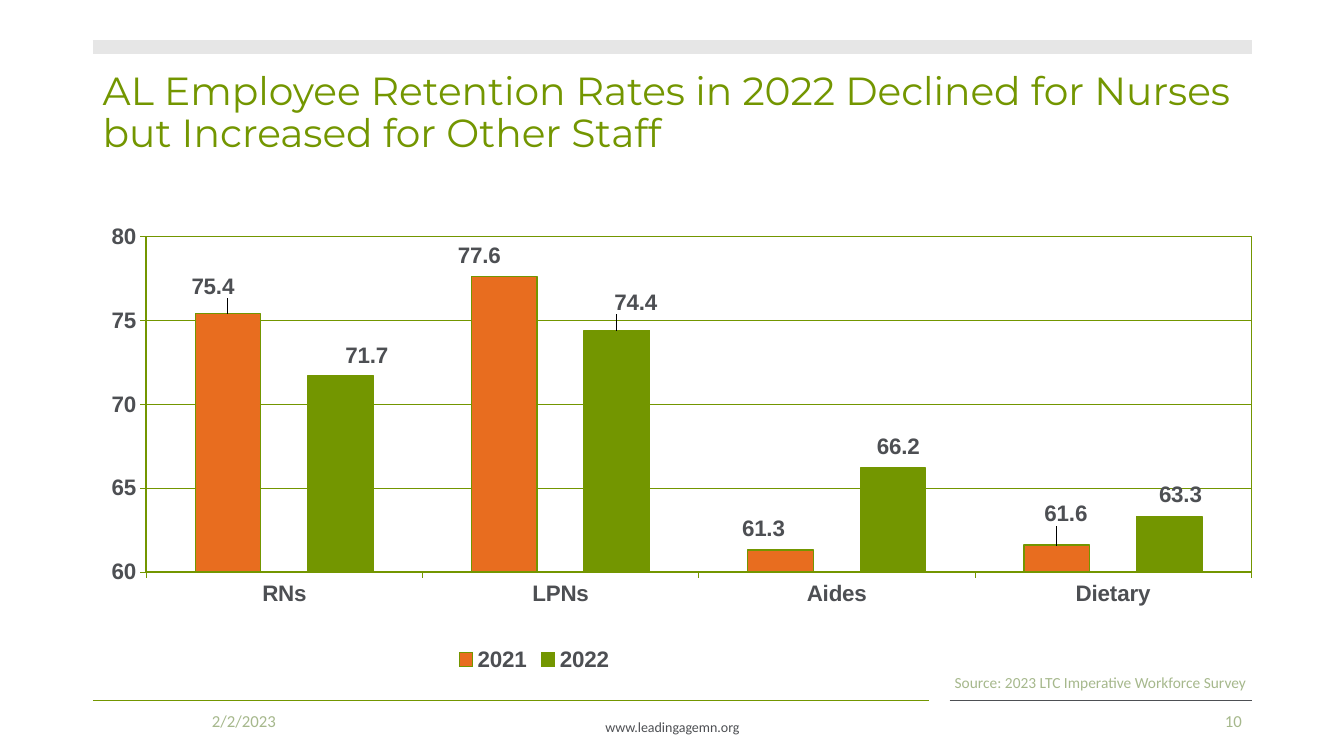
from lxml import etree
from pptx import Presentation, util as u
from pptx.chart.data import CategoryChartData
from pptx.dml.color import RGBColor
from pptx.enum import chart as ch, shapes, text
from pptx.oxml.ns import qn

THEME = {
    "green": "739600", "orange": "E86D1F", "slate": "4D4F53",
    "mist": "E6E6E6", "sage": "A6B88C",
    "head": 28, "label": 16, "foot": 12, "note": 11, "site": 10,
    "title": "Montserrat", "body": "Calibri", "chart": "Arial",
}
LEFT, RIGHT, BASE = 2.34, 31.55, 17.65
WIDE = RIGHT - LEFT
RULES = [
    (LEFT, 23.42, BASE, "green", 1),
    (23.93, RIGHT, BASE, "slate", 1),
    (LEFT, RIGHT, 1.19, "mist", 10),
]
TEXTS = [
    ("www.leadingagemn.org", (11.23, 17.96, 11.43, 0.71), "site", "body", "slate", "CENTER"),
    ("AL Employee Retention Rates in 2022 Declined for Nurses but Increased for Other Staff",
     (LEFT, 1.02, WIDE, 3.68), "head", "title", "green", "LEFT"),
    ("2/2/2023", (LEFT, BASE, 7.62, 1.02), "foot", "body", "sage", "CENTER"),
    ("Source: 2023 LTC Imperative Workforce Survey",
     (22.02, 16.69, 11.43, 1.02), "note", "body", "sage", "CENTER"),
    ("10", (23.93, BASE, 7.62, 1.02), "foot", "body", "sage", "RIGHT"),
]
FRAME = (LEFT, 5.08, WIDE, 12.09)
STAFF = ["RNs", "LPNs", "Aides", "Dietary"]
RATES = [
    ("2021", "orange", [75.4, 77.6, 61.3, 61.6],
     [(-0.38, -0.28), (-0.63, -0.13), (-0.43, -0.13), (0.23, -0.38)]),
    ("2022", "green", [71.7, 74.4, 66.2, 63.3],
     [(0.66, -0.1), (0.48, -0.3), (0.13, -0.13), (0.28, -0.15)]),
]
PLOT = {"layoutTarget": "inner", "xMode": "edge", "yMode": "edge",
        "x": 0.046, "y": 0.073, "w": 0.954, "h": 0.699}
KEY = {"xMode": "edge", "yMode": "edge", "x": 0.31, "y": 0.92}


def put(item, **values):
    for name, value in values.items():
        setattr(item, name, value)


def tint(name):
    return RGBColor.from_string(THEME[name])


def cms(box):
    return [u.Cm(part) for part in box]


def style(font, size, face, color, bold=False):
    put(font, size=u.Pt(THEME[size]), name=THEME[face], bold=bold)
    font.color.rgb = tint(color)


def stroke(line, color, width):
    line.color.rgb = tint(color)
    line.width = u.Pt(width)


def place(host, values, after):
    for old in host.findall(qn("c:layout")):
        host.remove(old)
    layout = etree.Element(qn("c:layout"))
    manual = etree.SubElement(layout, qn("c:manualLayout"))
    for name, value in values.items():
        etree.SubElement(manual, qn("c:" + name)).set("val", str(value))
    mark = host.find(qn(after)) if after else None
    host.insert(0 if mark is None else host.index(mark) + 1, layout)


def draw_rule(slide, start, end, top, color, width):
    rule = slide.shapes.add_connector(
        shapes.MSO_CONNECTOR.STRAIGHT, *cms((start, top, end, top)))
    stroke(rule.line, color, width)
    etree.SubElement(rule._element.spPr, qn("a:effectLst"))


def draw_text(slide, words, box, size, face, color, align):
    frame = slide.shapes.add_textbox(*cms(box)).text_frame
    put(frame, word_wrap=True, vertical_anchor=text.MSO_ANCHOR.MIDDLE)
    para = frame.paragraphs[0]
    put(para, text=words, alignment=getattr(text.PP_ALIGN, align),
        line_spacing=0.9 if size == "head" else 1.0)
    style(para.runs[0].font, size, face, color)


def draw_chart(slide):
    data = CategoryChartData(number_format="0.0")
    data.categories = STAFF
    for name, _, rates, _ in RATES:
        data.add_series(name, rates)
    chart = slide.shapes.add_chart(
        ch.XL_CHART_TYPE.COLUMN_CLUSTERED, *cms(FRAME), data).chart
    put(chart, has_title=False, has_legend=True)
    style(chart.font, "label", "chart", "slate", True)
    put(chart.legend, position=ch.XL_LEGEND_POSITION.BOTTOM, include_in_layout=False)
    style(chart.legend.font, "label", "chart", "slate", True)
    place(chart.legend._element, KEY, "c:legendPos")

    for axis in (chart.category_axis, chart.value_axis):
        put(axis, major_tick_mark=ch.XL_TICK_MARK.OUTSIDE,
            minor_tick_mark=ch.XL_TICK_MARK.NONE)
        stroke(axis.format.line, "green", 0.25)
        style(axis.tick_labels.font, "label", "chart", "slate", True)
    chart.category_axis.tick_label_position = ch.XL_TICK_LABEL_POSITION.LOW
    put(chart.value_axis, minimum_scale=60, maximum_scale=80, major_unit=5,
        has_major_gridlines=True)
    put(chart.value_axis.tick_labels, number_format="0", number_format_is_linked=False)
    stroke(chart.value_axis.major_gridlines.format.line, "green", 0.25)

    plot = chart.plots[0]
    put(plot, gap_width=150, overlap=-72, vary_by_categories=False)
    for bars, (_, color, _, shifts) in zip(plot.series, RATES):
        bars.format.fill.solid()
        bars.format.fill.fore_color.rgb = tint(color)
        stroke(bars.format.line, "green", 0.98)
        put(bars.data_labels, show_value=True, number_format="0.0",
            number_format_is_linked=False, position=ch.XL_LABEL_POSITION.OUTSIDE_END)
        for spot in range(len(shifts)):
            label = bars.points[spot].data_label
            style(label.font, "label", "chart", "slate", True)
            label.position = ch.XL_LABEL_POSITION.OUTSIDE_END
        for node, (across, down) in zip(bars._element.iter(qn("c:dLbl")), shifts):
            move = {"x": round(across / FRAME[2], 4), "y": round(down / FRAME[3], 4)}
            place(node, move, "c:idx")

    area = chart._chartSpace.find(".//" + qn("c:plotArea"))
    place(area, PLOT, None)
    shape = etree.SubElement(area, qn("c:spPr"))
    etree.SubElement(shape, qn("a:noFill"))
    edge = etree.SubElement(shape, qn("a:ln"), w=str(u.Pt(1)))
    fill = etree.SubElement(edge, qn("a:solidFill"))
    etree.SubElement(fill, qn("a:srgbClr"), val=THEME["green"])


def main():
    deck = Presentation()
    put(deck, slide_width=u.Cm(33.87), slide_height=u.Cm(19.05))
    slide = deck.slides.add_slide(deck.slide_layouts[6])
    for rule in RULES:
        draw_rule(slide, *rule)
    draw_chart(slide)
    for item in TEXTS:
        draw_text(slide, *item)
    deck.save("out.pptx")


if __name__ == "__main__":
    main()
